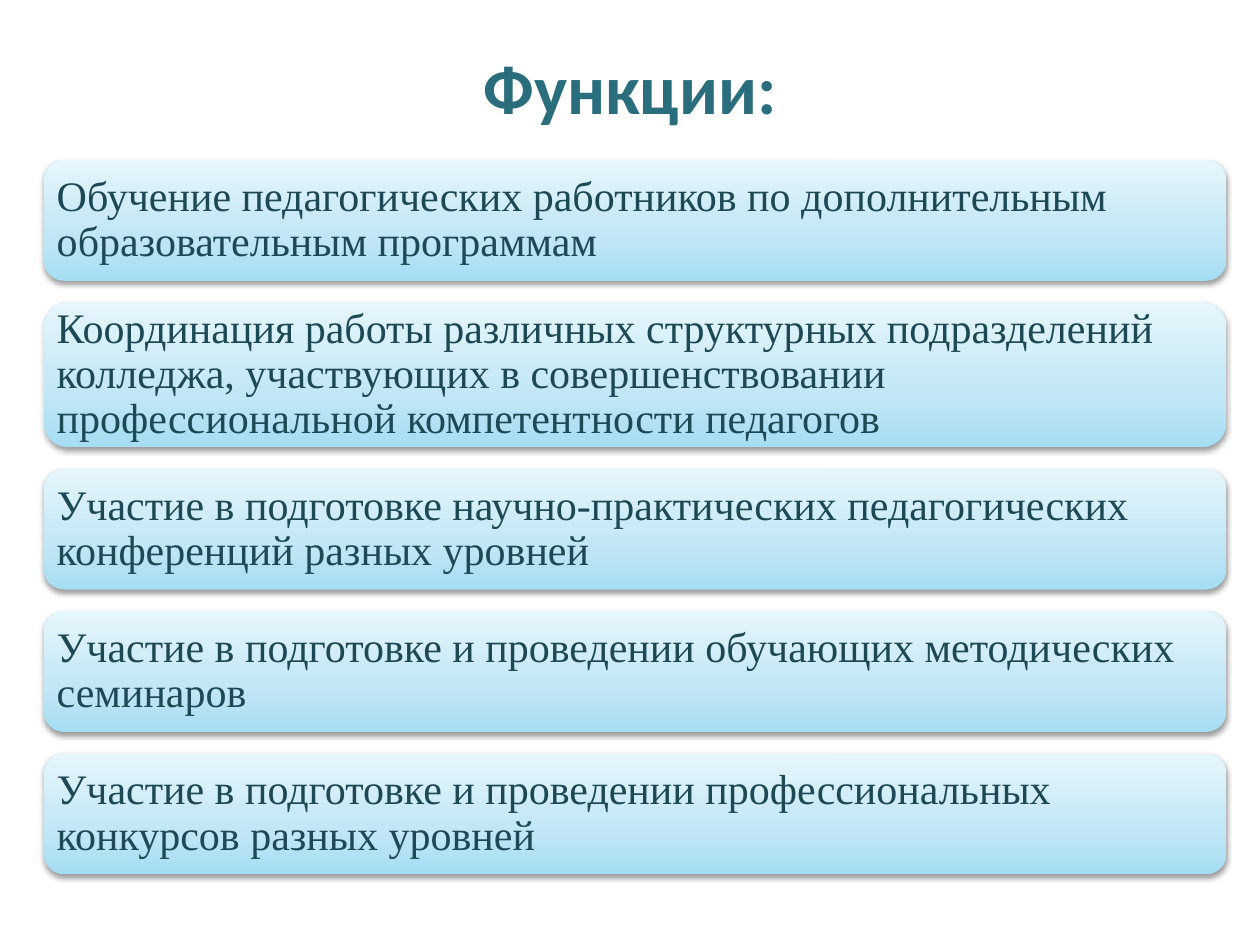
from lxml import etree
from pptx import Presentation
from pptx.dml.color import RGBColor
from pptx.enum.shapes import MSO_SHAPE
from pptx.enum.text import MSO_ANCHOR, PP_ALIGN
from pptx.oxml import parse_xml
from pptx.oxml.ns import nsdecls, qn
from pptx.util import Pt

ROUNDED = MSO_SHAPE.ROUNDED_RECTANGLE
MIDDLE = MSO_ANCHOR.MIDDLE
LEFT, CENTER = PP_ALIGN.LEFT, PP_ALIGN.CENTER

COLORS = {
    "title": "2A6D7D",
    "text": "1C4954",
    "deep": "A5DDF3",
    "mid": "C1E6F5",
    "pale": "E6F6FC",
    "shadow": "000000",
}
GRADIENT = [(0, "deep"), (35, "mid"), (100, "pale")]
CORNER = 1 / 6
CORNER_TEXT_SHARE = 0.29
TEXT_MARGIN = 7.2

FUNCTIONS = [
    ("Обучение педагогических работников по дополнительным образовательным программам", 69.1),
    ("Координация работы различных структурных подразделений колледжа, участвующих "
     "в совершенствовании профессиональной компетентности педагогов", 82.8),
    ("Участие в подготовке научно-практических педагогических конференций разных уровней", 69.1),
    ("Участие в подготовке и проведении обучающих методических семинаров", 69.1),
    ("Участие в подготовке и проведении профессиональных конкурсов разных уровней", 69.1),
]


def write_text(frame, text, font, size, color, align, bold=False):
    frame.word_wrap = True
    frame.vertical_anchor = MIDDLE
    paragraph = frame.paragraphs[0]
    paragraph.alignment = align
    run = paragraph.add_run()
    run.text = text
    run.font.name = font
    run.font.size = Pt(size)
    run.font.bold = bold
    run.font.color.rgb = RGBColor.from_string(COLORS[color])
    return paragraph


def paint_gradient(card):
    card.fill.gradient()
    card.fill.gradient_angle = 90
    stops = card.fill._fill._gradFill.find(qn("a:gsLst"))
    for stop in list(stops):
        stops.remove(stop)
    for percent, color in GRADIENT:
        stop = etree.SubElement(stops, qn("a:gs"), pos=str(percent * 1000))
        etree.SubElement(stop, qn("a:srgbClr"), val=COLORS[color])


def cast_shadow(card):
    card.shadow.inherit = False
    effects = card._element.spPr.find(qn("a:effectLst"))
    effects.append(parse_xml(
        f'<a:outerShdw {nsdecls("a")} blurRad="{Pt(3.1)}" dist="{Pt(1.6)}" '
        f'dir="5400000" rotWithShape="0"><a:srgbClr val="{COLORS["shadow"]}">'
        '<a:alpha val="38000"/></a:srgbClr></a:outerShdw>'))


def add_title(slide, left, top, width, height):
    title = slide.shapes.add_textbox(Pt(left), Pt(top), Pt(width), Pt(height))
    write_text(title.text_frame, "Функции:", "Calibri", 40, "title", CENTER, bold=True)


def add_card(slide, text, left, top, width, height):
    card = slide.shapes.add_shape(ROUNDED, Pt(left), Pt(top), Pt(width), Pt(height))
    card.adjustments[0] = CORNER
    paint_gradient(card)
    card.line.fill.background()
    cast_shadow(card)
    frame = card.text_frame
    margin = Pt(TEXT_MARGIN - CORNER_TEXT_SHARE * CORNER * height)
    frame.margin_left = frame.margin_right = margin
    frame.margin_top = frame.margin_bottom = margin
    paragraph = write_text(frame, text, "Times New Roman", 24, "text", LEFT)
    paragraph.line_spacing = 0.9


def add_function_list(slide, left, top, width, height):
    gap = (height - sum(tall for _, tall in FUNCTIONS)) / (len(FUNCTIONS) - 1)
    for text, tall in FUNCTIONS:
        add_card(slide, text, left, top, width, tall)
        top += tall + gap


def main():
    deck = Presentation()
    deck.slide_width, deck.slide_height = Pt(720), Pt(540)
    slide = deck.slides.add_slide(deck.slide_layouts[6])
    add_title(slide, 36, 21.6, 648, 55.4)
    add_function_list(slide, 25.2, 91.4, 675.4, 408.3)
    deck.save("out.pptx")


if __name__ == "__main__":
    main()
